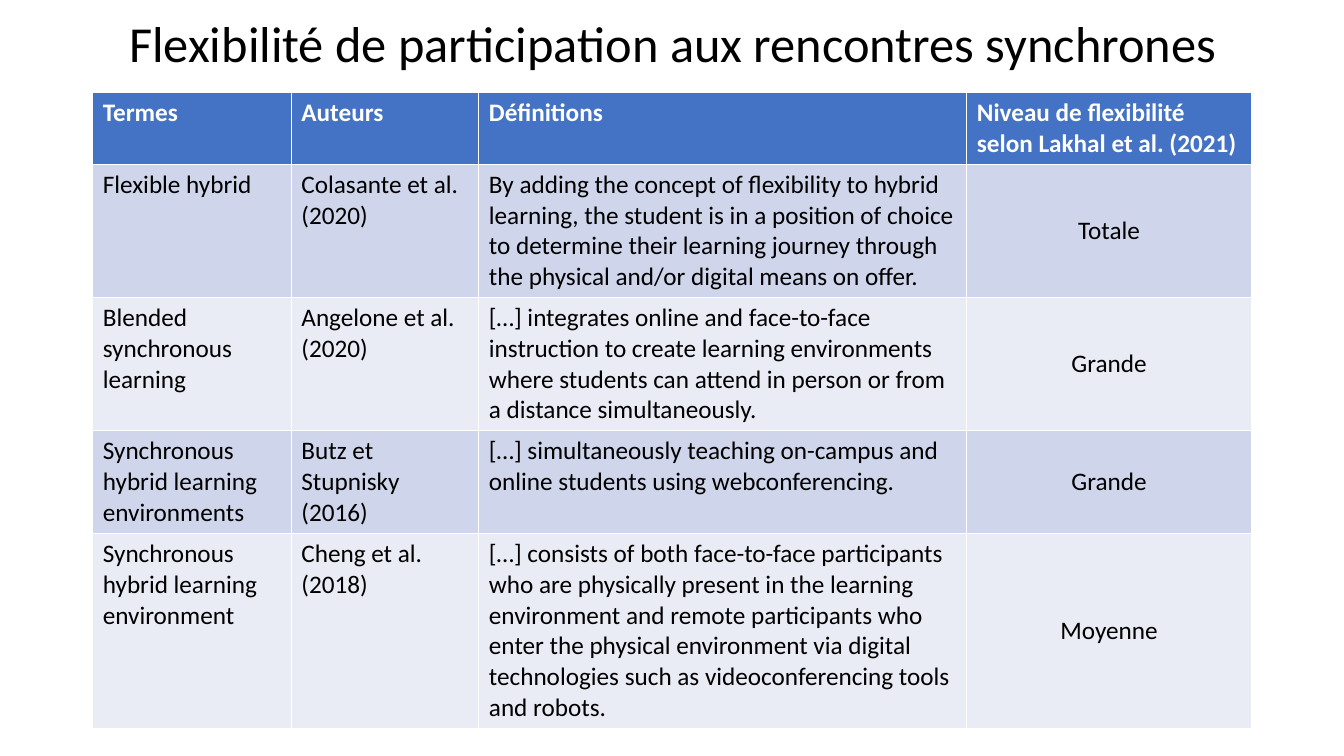
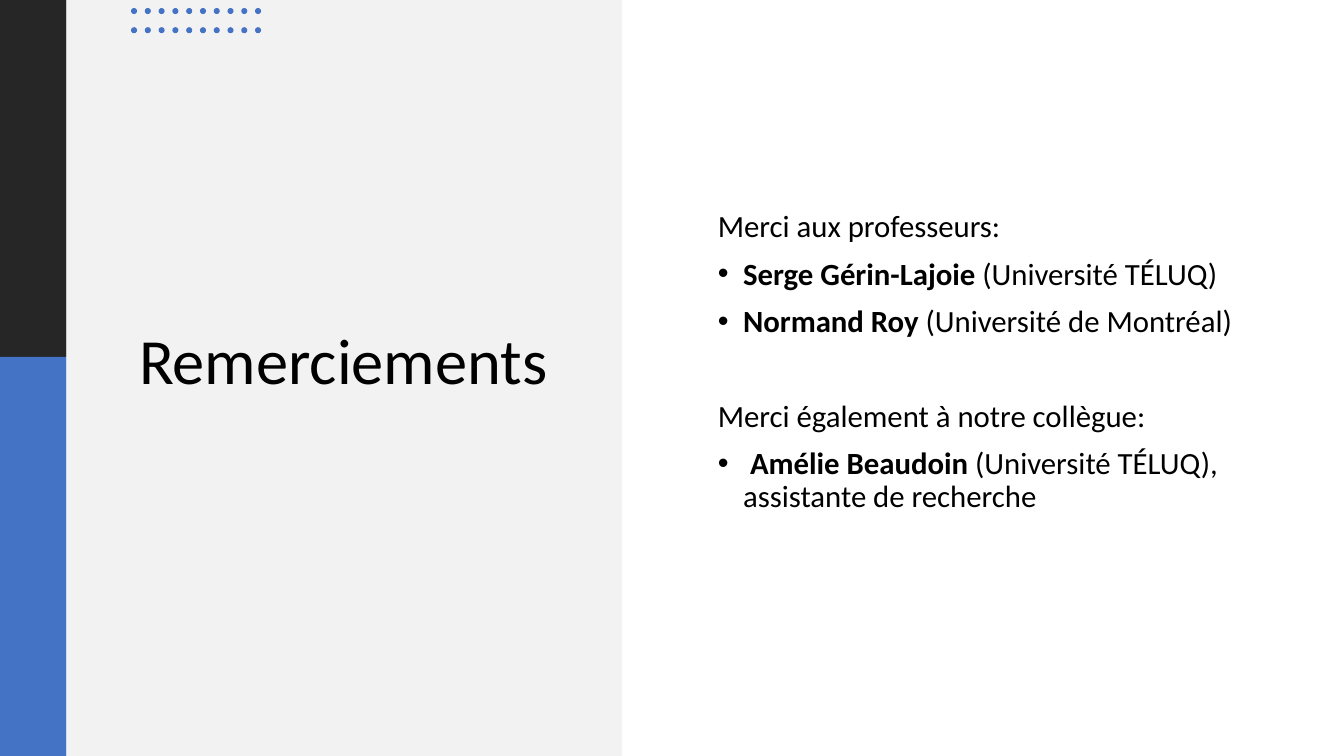
from lxml import etree
from pptx import Presentation
from pptx.dml.color import RGBColor
from pptx.enum import shapes, text
from pptx.oxml import ns
from pptx.util import Inches, Pt

FONT = "Calibri"
COLORS = {
    "text": "000000",
    "white": "FFFFFF",
    "accent": "4472C4",
    "dark": "262626",
    "panel": "F2F2F2",
    "odd_row": "CFD5EA",
    "even_row": "E9EBF5",
}
TITLE_ONLY, TITLE_AND_BODY = 5, 1

# Table content: a tuple in a cell holds several paragraphs
HEADERS = ["Termes", "Auteurs", "Définitions",
           "Niveau de flexibilité selon Lakhal et al. (2021)"]
DEFINITIONS = [
    ["Flexible hybrid", "Colasante et al. (2020)",
     "By adding the concept of flexibility to hybrid learning, the student is "
     "in a position of choice to determine their learning journey through the "
     "physical and/or digital means on offer.",
     "Totale"],
    [("Blended", "synchronous", "learning"), "Angelone et al. (2020)",
     ("[…] integrates online and face-to-face instruction to create learning "
      "environments",
      "where students can attend in person or from a distance simultaneously."),
     "Grande"],
    [("Synchronous", "hybrid learning", "environments"),
     "Butz et Stupnisky (2016)",
     "[…] simultaneously teaching on-campus and online students using "
     "webconferencing.",
     "Grande"],
    [("Synchronous", "hybrid learning", "environment"), "Cheng et al. (2018)",
     "[…] consists of both face-to-face participants who are physically present "
     "in the learning environment and remote participants who enter the "
     "physical environment via digital technologies such as videoconferencing "
     "tools and robots.",
     "Moyenne"],
]
COLUMN_WIDTHS = [1.97, 1.86, 4.84, 2.82]
ROW_HEIGHTS = [0.7, 1.32, 1.32, 1.02, 1.93]

# Thanks: (space before, bulleted, [(words, bold), ...])
THANKS = [
    (10, False, [("Merci aux professeurs:", False)]),
    (10, True, [("Serge Gérin-Lajoie", True), (" (Université TÉLUQ)", False)]),
    (10, True, [("Normand Roy", True), (" (Université de Montréal)", False)]),
    (44, False, [("Merci également à notre collègue:", False)]),
    (10, True, [(" ", False), ("Amélie Beaudoin", True),
                (" (Université TÉLUQ), assistante de recherche", False)]),
]


def color(name):
    return RGBColor.from_string(COLORS[name])


def paint(target, name):
    target.fill.solid()
    target.fill.fore_color.rgb = color(name)


def style_font(font, size, name="text", bold=None):
    font.name, font.size, font.bold = FONT, Pt(size), bold
    font.color.rgb = color(name)


def place(shape, left, top, width, height):
    shape.left, shape.top = Inches(left), Inches(top)
    shape.width, shape.height = Inches(width), Inches(height)
    frame = shape.text_frame
    frame.word_wrap = True
    frame.auto_size = text.MSO_AUTO_SIZE.NONE
    frame.vertical_anchor = text.MSO_ANCHOR.MIDDLE
    return frame


def set_title(slide, words, box, size, align):
    title = slide.shapes.title
    frame = place(title, *box)
    frame.text = words
    paragraph = frame.paragraphs[0]
    paragraph.alignment = align
    paragraph.line_spacing = 0.9
    style_font(paragraph.font, size)
    # Keep the title in front of the decoration
    slide.shapes.element.append(title.element)


def add_block(parent, kind, box, fill):
    block = parent.add_shape(kind, *map(Inches, box))
    block.shadow.inherit = False
    paint(block, fill)
    block.line.fill.background()


def set_bullet(paragraph, bulleted):
    properties = paragraph._p.get_or_add_pPr()
    indent = Inches(0.25) if bulleted else 0
    properties.set("marL", str(indent))
    properties.set("indent", str(-indent))
    if bulleted:
        etree.SubElement(properties, ns.qn("a:buFont"), typeface="Arial")
        etree.SubElement(properties, ns.qn("a:buChar"), char="•")
    else:
        etree.SubElement(properties, ns.qn("a:buNone"))


def fill_cell(cell, words, fill, font_color, bold, centred):
    paint(cell, fill)
    cell.text = words if isinstance(words, str) else "\n".join(words)
    if centred:
        cell.vertical_anchor = text.MSO_ANCHOR.MIDDLE
    for paragraph in cell.text_frame.paragraphs:
        if centred:
            paragraph.alignment = text.PP_ALIGN.CENTER
        style_font(paragraph.font, 18, font_color, bold)


def add_definitions_table(slide):
    rows = [HEADERS] + DEFINITIONS
    table = slide.shapes.add_table(
        len(rows), len(HEADERS), Inches(0.92), Inches(0.92),
        Inches(sum(COLUMN_WIDTHS)), Inches(sum(ROW_HEIGHTS))).table
    for column, width in zip(table.columns, COLUMN_WIDTHS):
        column.width = Inches(width)
    for r, (row, height) in enumerate(zip(rows, ROW_HEIGHTS)):
        table.rows[r].height = Inches(height)
        header = r == 0
        fill = "accent" if header else "odd_row" if r % 2 else "even_row"
        for c, words in enumerate(row):
            fill_cell(table.cell(r, c), words, fill,
                      "white" if header else "text", header,
                      centred=not header and c == len(HEADERS) - 1)


def add_dots(slide):
    columns, rows = 10, 2
    dots = slide.shapes.add_group_shape().shapes
    for c in range(columns):
        for r in range(rows):
            left = 1.3 + c * 1.23 / (columns - 1)
            add_block(dots, shapes.MSO_SHAPE.OVAL,
                      (left, 0.08 + r * 0.19, 0.06, 0.06), "accent")


def fill_thanks(body):
    frame = place(body, 7.02, 0.55, 5.58, 6.1)
    for i, (space, bulleted, runs) in enumerate(THANKS):
        paragraph = frame.add_paragraph() if i else frame.paragraphs[0]
        paragraph.line_spacing = 0.9
        paragraph.space_before = Pt(space)
        set_bullet(paragraph, bulleted)
        style_font(paragraph.font, 22)
        for words, bold in runs:
            run = paragraph.add_run()
            run.text = words
            run.font.bold = bold


def build_flexibility_slide(deck):
    slide = deck.slides.add_slide(deck.slide_layouts[TITLE_ONLY])
    set_title(slide, "Flexibilité de participation aux rencontres synchrones",
              (0.92, 0, 11.51, 0.91), 36, text.PP_ALIGN.CENTER)
    add_definitions_table(slide)


def build_thanks_slide(deck):
    slide = deck.slides.add_slide(deck.slide_layouts[TITLE_AND_BODY])
    # Side bands and grey panel
    for box, fill in [((0, 0, 0.66, 3.54), "dark"),
                      ((0, 3.54, 0.66, 3.96), "accent"),
                      ((0.66, 0, 5.51, 7.5), "panel")]:
        add_block(slide.shapes, shapes.MSO_SHAPE.RECTANGLE, box, fill)
    add_dots(slide)
    set_title(slide, "Remerciements", (1.28, 1.46, 4.29, 4.29), 46,
              text.PP_ALIGN.LEFT)
    fill_thanks(slide.placeholders[1])


def main():
    deck = Presentation()
    deck.slide_width, deck.slide_height = Inches(13.33), Inches(7.5)
    build_flexibility_slide(deck)
    build_thanks_slide(deck)
    deck.save("out.pptx")


if __name__ == "__main__":
    main()
